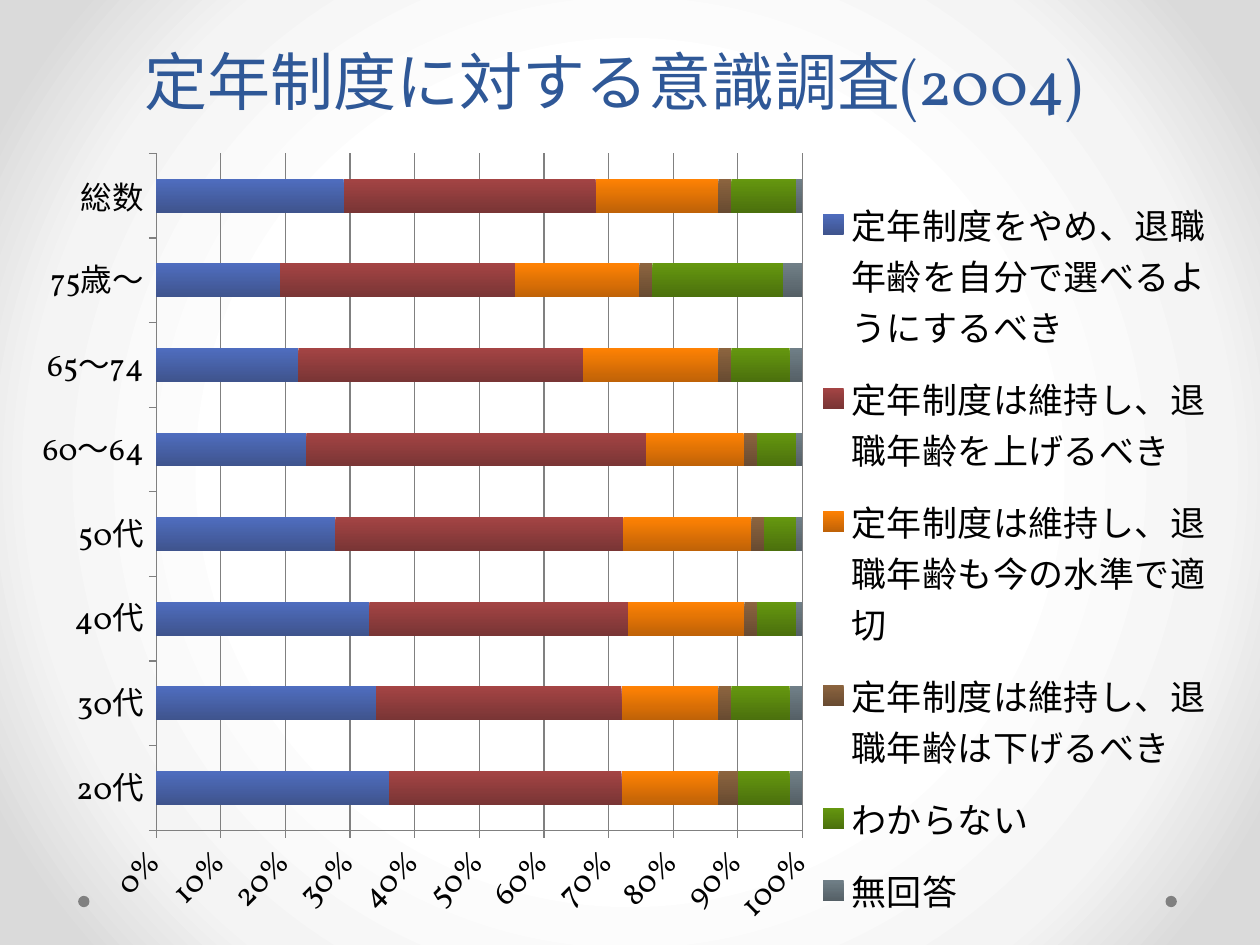
from dataclasses import dataclass

from lxml import etree
from pptx import Presentation
from pptx.chart.data import CategoryChartData
from pptx.dml.color import RGBColor
from pptx.enum.chart import XL_CHART_TYPE, XL_LEGEND_POSITION, XL_TICK_MARK
from pptx.enum.shapes import MSO_SHAPE
from pptx.enum.text import MSO_ANCHOR, MSO_AUTO_SIZE, PP_ALIGN
from pptx.oxml import parse_xml
from pptx.oxml.ns import nsdecls, qn
from pptx.util import Inches, Pt

BAR = XL_CHART_TYPE.BAR_STACKED_100
RIGHT = XL_LEGEND_POSITION.RIGHT
OUTSIDE = XL_TICK_MARK.OUTSIDE
OVAL = MSO_SHAPE.OVAL
BOTTOM = MSO_ANCHOR.BOTTOM
CENTER = PP_ALIGN.CENTER
NO_FIT = MSO_AUTO_SIZE.NONE

FONT = "Vollkorn"
COLORS = {"title": "2F5897", "text": "000000", "line": "808080"}
BACKGROUND_STOPS = [(50, "FFFFFF"), (76, "F4F4F4"), (92, "DADADA")]
CATEGORIES = ["20代", "30代", "40代", "50代", "60〜64", "65〜74", "75歳〜", "総数"]


@dataclass
class Answer:
    name: str
    values: list[int]
    top: str
    bottom: str


ANSWERS = [
    Answer("定年制度をやめ、退職年齢を自分で選べるようにするべき",
           [36, 34, 33, 28, 23, 22, 19, 29], "4F6DBF", "3F548D"),
    Answer("定年制度は維持し、退職年齢を上げるべき",
           [36, 38, 40, 45, 52, 44, 36, 39], "A44444", "793535"),
    Answer("定年制度は維持し、退職年齢も今の水準で適切",
           [15, 15, 18, 20, 15, 21, 19, 19], "FF8204", "BF6207"),
    Answer("定年制度は維持し、退職年齢は下げるべき",
           [3, 2, 2, 2, 2, 2, 2, 2], "8C643F", "684B31"),
    Answer("わからない", [8, 9, 6, 5, 6, 9, 20, 10], "65970F", "4B700D"),
    Answer("無回答", [2, 2, 1, 1, 1, 2, 3, 1], "707F87", "556066"),
]


def rgb(key: str) -> RGBColor:
    return RGBColor.from_string(COLORS.get(key, key))


def format_font(font, *, size: float, color: str) -> None:
    font.name = FONT
    font.size = Pt(size)
    font.color.rgb = rgb(color)


def add_text(tf, text: str, *, size: float, color: str, align, spacing: float) -> None:
    p = tf.paragraphs[0]
    p.alignment = align
    p.line_spacing = Pt(spacing)
    r = p.add_run()
    r.text = text
    format_font(r.font, size=size, color=color)


def set_background(s) -> None:
    s.background.fill.gradient()
    grad = s.element.find(".//" + qn("a:gradFill"))
    stops = "".join(
        f'<a:gs pos="{pos * 1000}"><a:srgbClr val="{color}"/></a:gs>'
        for pos, color in BACKGROUND_STOPS
    )
    grad.getparent().replace(grad, parse_xml(
        f'<a:gradFill {nsdecls("a")} rotWithShape="1"><a:gsLst>{stops}</a:gsLst>'
        '<a:path path="circle"><a:fillToRect l="50000" t="50000" r="50000" b="50000"/>'
        "</a:path></a:gradFill>"
    ))


def add_dot(s, left: float) -> None:
    sp = s.shapes.add_shape(OVAL, Inches(left), Inches(7.11), Inches(0.09), Inches(0.09))
    sp.shadow.inherit = False
    sp.fill.solid()
    sp.fill.fore_color.rgb = rgb("line")
    sp.line.fill.background()


def add_title(s, text: str) -> None:
    sp = s.shapes.title
    sp.left, sp.top = Inches(0.6), Inches(0.32)
    sp.width, sp.height = Inches(8.54), Inches(0.67)
    tf = sp.text_frame
    tf.word_wrap = True
    tf.auto_size = NO_FIT
    tf.vertical_anchor = BOTTOM
    add_text(tf, text, size=36, color="title", align=CENTER, spacing=58)


def set_layout(parent, after: str, *, inner: bool, **box: float) -> None:
    for old in parent.findall(qn("c:layout")):
        parent.remove(old)
    layout = etree.Element(qn("c:layout"))
    manual = etree.SubElement(layout, qn("c:manualLayout"))
    settings = {"layoutTarget": "inner"} if inner else {}
    settings |= {"xMode": "edge", "yMode": "edge", **box}
    for tag, value in settings.items():
        etree.SubElement(manual, qn(f"c:{tag}")).set("val", str(value))
    if after:
        parent.find(qn(after)).addnext(layout)
    else:
        parent.insert(0, layout)


def format_axis(axis) -> None:
    axis.major_tick_mark = OUTSIDE
    axis.format.line.color.rgb = rgb("line")
    axis.format.line.width = Pt(0.75)
    format_font(axis.tick_labels.font, size=18, color="text")


def add_survey_chart(s) -> None:
    data = CategoryChartData()
    data.categories = CATEGORIES
    for answer in ANSWERS:
        data.add_series(answer.name, answer.values)
    chart = s.shapes.add_chart(
        BAR, Inches(0), Inches(1.09), Inches(10), Inches(6.41), data
    ).chart
    format_font(chart.font, size=18, color="text")
    chart.has_title = False

    plot = chart.plots[0]
    plot.gap_width = 150
    plot.overlap = 100
    plot.vary_by_categories = False
    for series, answer in zip(plot.series, ANSWERS):
        fill = series.format.fill
        fill.gradient()
        fill.gradient_angle = 270
        for stop, color in zip(fill.gradient_stops, (answer.top, answer.bottom)):
            stop.color.rgb = rgb(color)

    format_axis(chart.category_axis)
    axis = chart.value_axis
    format_axis(axis)
    axis.has_major_gridlines = True
    axis.major_gridlines.format.line.color.rgb = rgb("line")
    axis.major_gridlines.format.line.width = Pt(0.75)
    axis.minimum_scale, axis.maximum_scale, axis.major_unit = 0, 1, 0.1
    axis.tick_labels.number_format = "0%"
    axis.tick_labels.number_format_is_linked = False
    axis._element.find(".//" + qn("a:bodyPr")).set("rot", "-2700000")

    chart.has_legend = True
    legend = chart.legend
    legend.position = RIGHT
    legend.include_in_layout = False
    format_font(legend.font, size=20, color="text")
    plot_area = chart._chartSpace.chart.plotArea
    set_layout(plot_area, "", inner=True, x=0.124, y=0.02, w=0.513, h=0.838)
    set_layout(legend._element, "c:legendPos", inner=False, x=0.64, y=0.05, w=0.33, h=0.94)


def main() -> None:
    prs = Presentation()
    prs.slide_width, prs.slide_height = Inches(10), Inches(7.5)
    s = prs.slides.add_slide(prs.slide_layouts[5])
    set_background(s)
    for left in (9.25, 0.62):
        add_dot(s, left)
    add_title(s, "定年制度に対する意識調査(2004)")
    add_survey_chart(s)
    prs.save("out.pptx")


if __name__ == "__main__":
    main()
